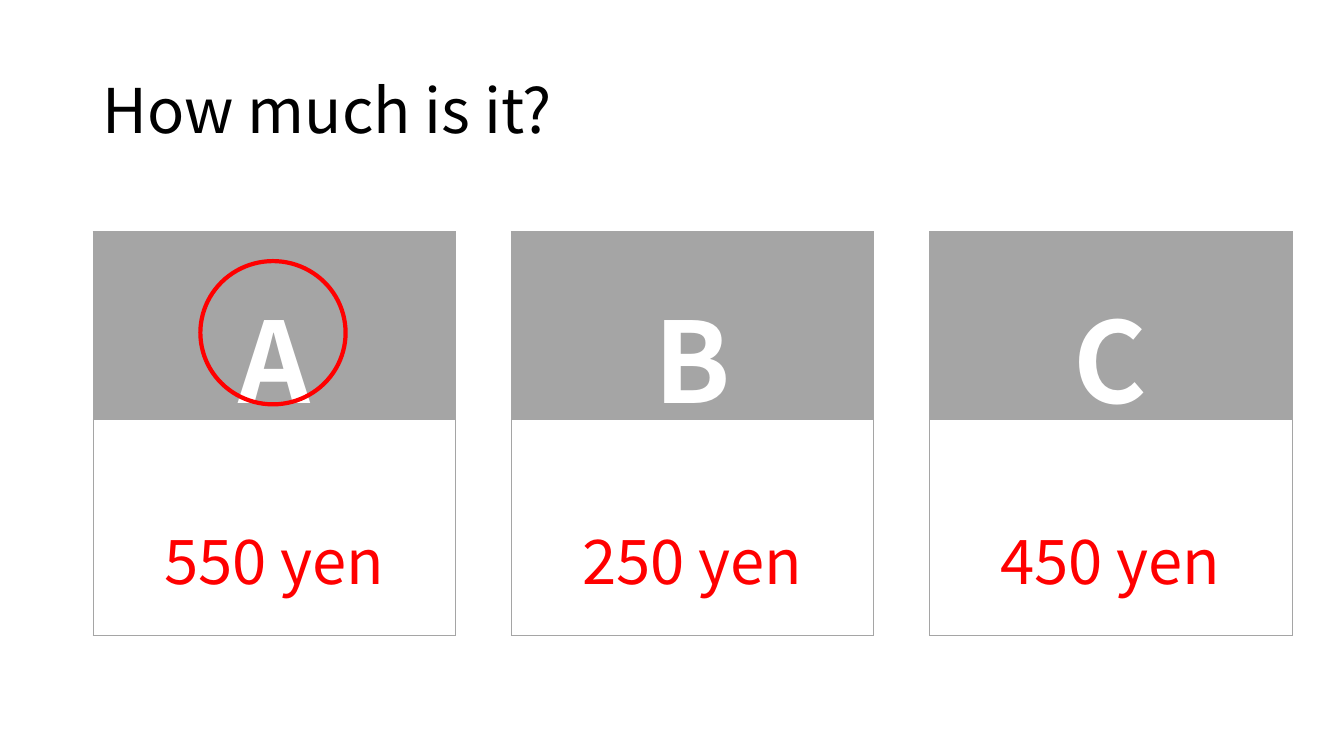
from dataclasses import dataclass

from lxml.etree import SubElement
from pptx import Presentation
from pptx.dml.color import RGBColor
from pptx.enum.shapes import MSO_SHAPE
from pptx.enum.text import MSO_ANCHOR, PP_ALIGN
from pptx.oxml.ns import qn
from pptx.slide import Slide
from pptx.table import _Cell
from pptx.text.text import _Paragraph
from pptx.util import Cm, Pt


@dataclass(frozen=True)
class Theme:
    font: str = "Noto Sans CJK JP"
    black: str = "000000"
    white: str = "FFFFFF"
    grey: str = "A5A5A5"
    red: str = "FF0000"
    body_size: int = 44
    letter_size: int = 80
    border: float = 0.5
    ring: float = 3


@dataclass(frozen=True)
class PriceCard:
    letter: str
    price: str


@dataclass(frozen=True)
class CardRow:
    text: str
    size: int
    color: str
    fill: str
    bold: bool
    height: float
    margin_top: float


THEME = Theme()
CARDS = [
    PriceCard("A", "550 yen"),
    PriceCard("B", "250 yen"),
    PriceCard("C", "450 yen"),
]
LEFT, TOP, WIDTH, STEP = 2.34, 5.84, 9.14, 10.54


def add_text(p: _Paragraph, text: str, size: int, color: str, bold: bool = False) -> None:
    r = p.add_run()
    r.text = text
    r.font.name = THEME.font
    r.font.size = Pt(size)
    r.font.bold = bold
    r.font.color.rgb = RGBColor.from_string(color)


def add_borders(cell: _Cell) -> None:
    tcPr = cell._tc.get_or_add_tcPr()
    for side in ("a:lnL", "a:lnR", "a:lnT", "a:lnB"):
        ln = SubElement(tcPr, qn(side), w=str(Pt(THEME.border)))
        fill = SubElement(ln, qn("a:solidFill"))
        SubElement(fill, qn("a:srgbClr"), val=THEME.grey)


def add_title(s: Slide, text: str) -> None:
    sp = s.shapes.add_textbox(Cm(LEFT), Cm(1.02), Cm(29.21), Cm(3.68))
    tf = sp.text_frame
    tf.word_wrap = True
    tf.vertical_anchor = MSO_ANCHOR.MIDDLE
    p = tf.paragraphs[0]
    p.line_spacing = 0.9
    add_text(p, text, THEME.body_size, THEME.black)


def add_card(s: Slide, card: PriceCard, left: float) -> None:
    rows = [
        CardRow(card.letter, THEME.letter_size, THEME.white, THEME.grey, True, 4.72, 1.04),
        CardRow(card.price, THEME.body_size, THEME.red, THEME.white, False, 5.46, 2.37),
    ]
    height = sum(row.height for row in rows)
    table = s.shapes.add_table(len(rows), 1, Cm(left), Cm(TOP), Cm(WIDTH), Cm(height)).table
    table.horz_banding = False
    for i, row in enumerate(rows):
        table.rows[i].height = Cm(row.height)
        cell = table.cell(i, 0)
        cell.margin_top = Cm(row.margin_top)
        add_borders(cell)
        cell.fill.solid()
        cell.fill.fore_color.rgb = RGBColor.from_string(row.fill)
        p = cell.text_frame.paragraphs[0]
        p.alignment = PP_ALIGN.CENTER
        add_text(p, row.text, row.size, row.color, row.bold)


def add_answer_ring(s: Slide) -> None:
    sp = s.shapes.add_shape(MSO_SHAPE.OVAL, Cm(5.05), Cm(6.58), Cm(3.66), Cm(3.61))
    sp.shadow.inherit = False
    sp.fill.background()
    sp.line.color.rgb = RGBColor.from_string(THEME.red)
    sp.line.width = Pt(THEME.ring)


def main() -> None:
    """Build the price quiz slide and save it."""
    prs = Presentation()
    prs.slide_width, prs.slide_height = Cm(33.87), Cm(19.05)
    s = prs.slides.add_slide(prs.slide_layouts[6])
    add_title(s, "How much is it?")
    for i, card in enumerate(CARDS):
        add_card(s, card, LEFT + i * STEP)
    add_answer_ring(s)
    prs.save("out.pptx")


if __name__ == "__main__":
    main()
